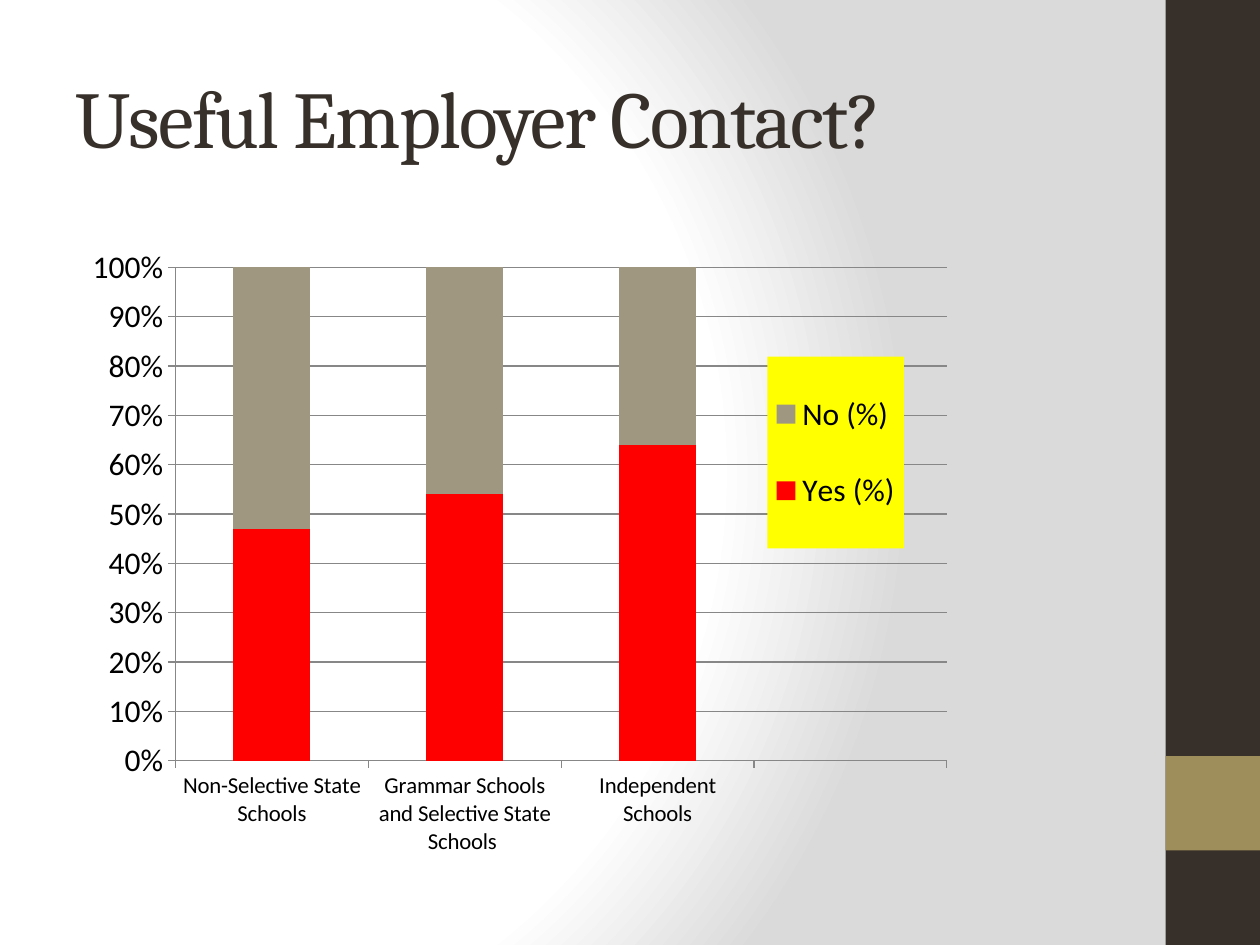
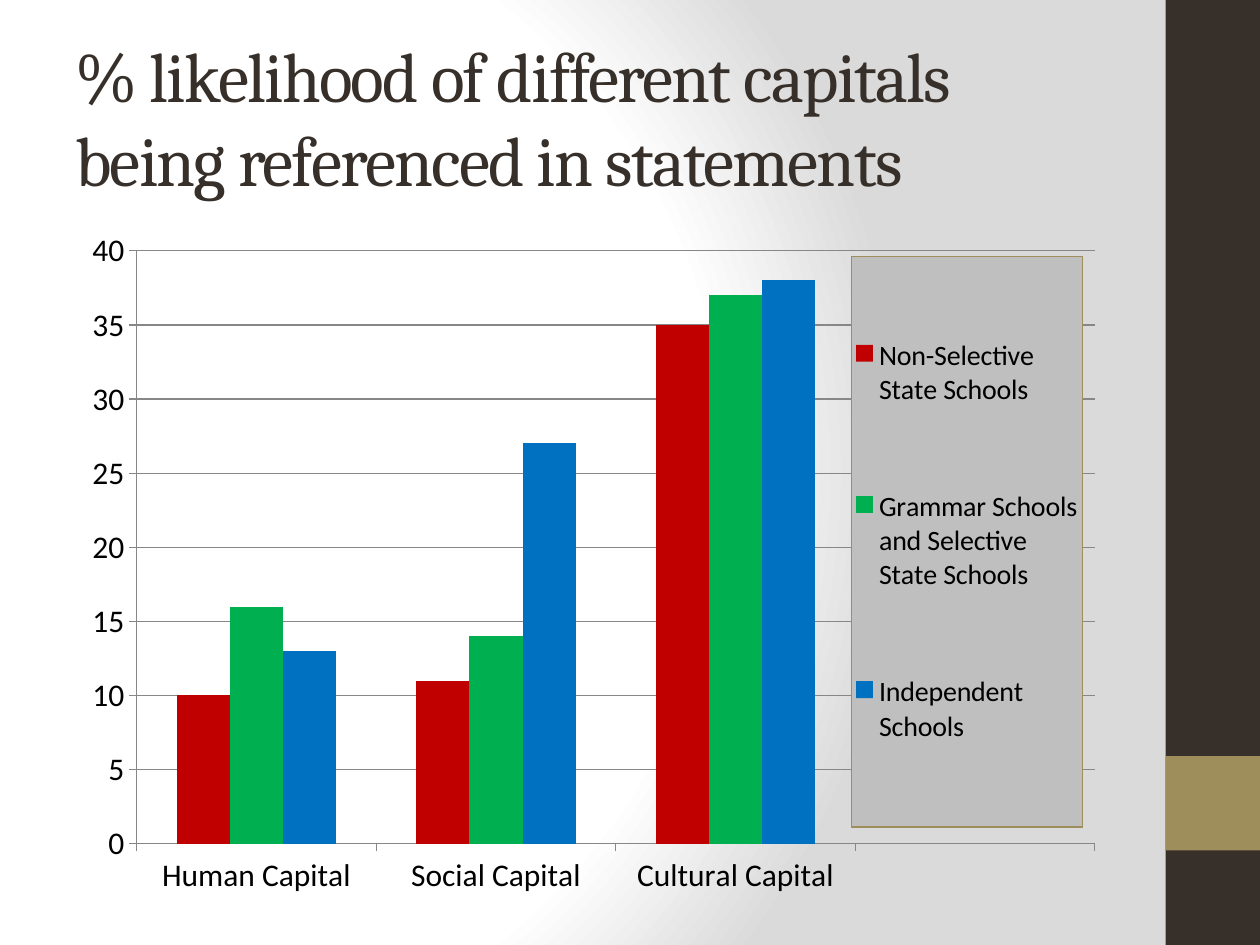
from dataclasses import dataclass

from lxml.etree import SubElement
from pptx import Presentation
from pptx.chart.data import CategoryChartData
from pptx.dml.color import RGBColor as RGB
from pptx.enum.chart import XL_CHART_TYPE as CT, XL_LEGEND_POSITION as LP
from pptx.enum.shapes import MSO_SHAPE as SHAPE
from pptx.enum.text import MSO_ANCHOR as ANCHOR
from pptx.oxml import parse_xml
from pptx.oxml.ns import nsdecls, qn
from pptx.util import Inches, Pt

SCHOOLS = ("Non-Selective State Schools",
           "Grammar Schools and Selective State Schools ",
           "Independent Schools")
CAPITALS = ("Human Capital", "Social Capital", "Cultural Capital")


@dataclass(frozen=True)
class Theme:
    """Colours, fonts and type sizes of the deck."""
    dark: str = "37302A"
    accent: str = "9E8E5C"
    light: str = "FFFFFF"
    shade: str = "DADADA"
    text: str = "000000"
    rule: str = "878787"
    taupe: str = "A09781"
    bright_red: str = "FF0000"
    red: str = "C00000"
    green: str = "00B050"
    blue: str = "0070C0"
    yellow: str = "FFFF00"
    grey: str = "BFBFBF"
    title_font: str = "Cambria"
    chart_font: str = "Calibri"
    title_size: int = 46
    long_title_size: int = 40
    chart_size: int = 18
    legend_size: int = 16
    label_size: int = 13


class Deck:
    """Draws elements on the current slide on a 40 by 30 grid."""
    COLS, ROWS = 40, 30

    def __init__(self, theme):
        """Start a presentation in the given style."""
        self.t = theme
        self.prs = Presentation()
        self.prs.slide_width, self.prs.slide_height = Inches(10), Inches(7.5)
        self.s = None

    def box(self, col, row, cols, rows):
        """Turn grid units into left, top, width and height."""
        w, h = self.prs.slide_width / self.COLS, self.prs.slide_height / self.ROWS
        return [round(v) for v in (col * w, row * h, cols * w, rows * h)]

    def slide(self, title, size):
        """Add a slide with its background, side band and title."""
        self.s = self.prs.slides.add_slide(self.prs.slide_layouts[6])
        self.background()
        self.rect(self.t.dark, 37, 0, 3, 30)
        self.rect(self.t.accent, 37, 24, 3, 3)
        self.title(title, size)

    def background(self):
        """Fill the slide with a radial gradient."""
        self.s.background.fill.solid()
        bg = self.s.element.find(".//" + qn("p:bgPr"))
        stops = "".join(
            f'<a:gs pos="{pos}000"><a:srgbClr val="{colour}"/></a:gs>'
            for pos, colour in ((0, self.t.light), (75, self.t.light), (100, self.t.shade)))
        bg.replace(bg[0], parse_xml(
            f'<a:gradFill {nsdecls("a")} rotWithShape="1"><a:gsLst>{stops}</a:gsLst>'
            '<a:path path="circle"><a:fillToRect l="20000" t="50000" r="100000" b="50000"/>'
            '</a:path></a:gradFill>'))

    def rect(self, colour, *place):
        """Add a plain rectangle."""
        sp = self.s.shapes.add_shape(SHAPE.RECTANGLE, *self.box(*place))
        sp.shadow.inherit = False
        sp.fill.solid()
        sp.fill.fore_color.rgb = RGB.from_string(colour)
        sp.line.fill.background()

    def title(self, text, size):
        """Add the slide title."""
        tf = self.s.shapes.add_textbox(*self.box(2, 1.2, 33.32, 5)).text_frame
        tf.word_wrap = True
        tf.vertical_anchor = ANCHOR.MIDDLE
        tf.text = text
        r = tf.paragraphs[0].runs[0]
        r.font.name, r.font.size = self.t.title_font, Pt(size)
        r.font.color.rgb = RGB.from_string(self.t.dark)
        r.font._element.set("spc", "-100")

    def chart(self, kind, place, categories, series, plot_area, number_format):
        """Add a column chart with an empty last category and return it."""
        data = CategoryChartData()
        data.categories = [*categories, ""]
        for name, values, _ in series:
            data.add_series(name, [*values, None])
        chart = self.s.shapes.add_chart(kind, *self.box(*place), data).chart
        chart.has_title = False
        self.font(chart.font, self.t.chart_size)
        plot = chart.plots[0]
        plot.vary_by_categories = False
        plot.gap_width = 150
        plot.overlap = 100 if kind == CT.COLUMN_STACKED_100 else 0
        for ser, (_, _, colour) in zip(plot.series, series):
            ser.invert_if_negative = False
            ser.format.fill.solid()
            ser.format.fill.fore_color.rgb = RGB.from_string(colour)
        axis = chart.value_axis
        axis.has_major_gridlines = True
        axis.tick_labels.number_format = number_format
        axis.tick_labels.number_format_is_linked = False
        for part in (axis, axis.major_gridlines, chart.category_axis):
            part.format.line.color.rgb = RGB.from_string(self.t.rule)
            part.format.line.width = Pt(0.75)
        area = chart._chartSpace.chart.plotArea
        area.insert(0, self.layout(area, plot_area, inner=True))
        return chart

    def font(self, font, size):
        """Style chart text."""
        font.name, font.size = self.t.chart_font, Pt(size)
        font.color.rgb = RGB.from_string(self.t.text)

    def layout(self, parent, shares, inner=False):
        """Make a manual layout from shares of the chart's size."""
        for old in parent.findall(qn("c:layout")):
            parent.remove(old)
        layout = parse_xml(f'<c:layout {nsdecls("c")}><c:manualLayout/></c:layout>')
        items = [("layoutTarget", "inner")] if inner else []
        items += [("xMode", "edge"), ("yMode", "edge"), *zip("xywh", shares)]
        for tag, value in items:
            SubElement(layout[0], qn("c:" + tag)).set("val", str(value))
        return layout

    def legend(self, chart, position, shares, size, fill, line=None):
        """Add a filled legend placed by shares of the chart's size."""
        chart.has_legend = True
        legend = chart.legend
        legend.position = position
        legend.include_in_layout = False
        self.font(legend.font, size)
        el = legend._element
        el.find(qn("c:legendPos")).addnext(self.layout(el, shares))
        solid = '<a:solidFill><a:srgbClr val="{}"/></a:solidFill>'
        border = f'<a:ln w="9525">{solid.format(line)}</a:ln>' if line else ""
        el.find(qn("c:txPr")).addprevious(parse_xml(
            f'<c:spPr {nsdecls("c", "a")}>{solid.format(fill)}{border}</c:spPr>'))


def employer_contact(deck):
    """Build the employer contact slide."""
    t = deck.t
    deck.slide("Useful Employer Contact?", t.title_size)
    series = (("Yes (%)", (47, 54, 64), t.bright_red),
              ("No (%)", (53, 46, 36), t.taupe))
    chart = deck.chart(CT.COLUMN_STACKED_100, (2.04, 7.12, 33.32, 21), SCHOOLS, series,
                       (0.106, 0.065, 0.735, 0.746), "0%")
    deck.font(chart.category_axis.tick_labels.font, t.label_size)
    deck.legend(chart, LP.CORNER, (0.67, 0.2, 0.13, 0.29), t.chart_size, t.yellow)


def capitals(deck):
    """Build the slide on capitals referenced in statements."""
    t = deck.t
    deck.slide("% likelihood of different capitals being referenced in statements",
               t.long_title_size)
    values = ((10, 11, 35), (16, 14, 37), (13, 27, 38))
    series = tuple(zip(SCHOOLS, values, (t.red, t.green, t.blue)))
    chart = deck.chart(CT.COLUMN_CLUSTERED, (2.04, 6.8, 33.32, 22.36), CAPITALS, series,
                       (0.069, 0.052, 0.913, 0.842), "General")
    axis = chart.value_axis
    axis.minimum_scale, axis.maximum_scale, axis.major_unit = 0, 40, 5
    deck.legend(chart, LP.TOP, (0.75, 0.06, 0.22, 0.81), t.legend_size, t.grey, t.accent)


def main():
    """Build and save the deck."""
    deck = Deck(Theme())
    employer_contact(deck)
    capitals(deck)
    deck.prs.save("out.pptx")


if __name__ == "__main__":
    main()
